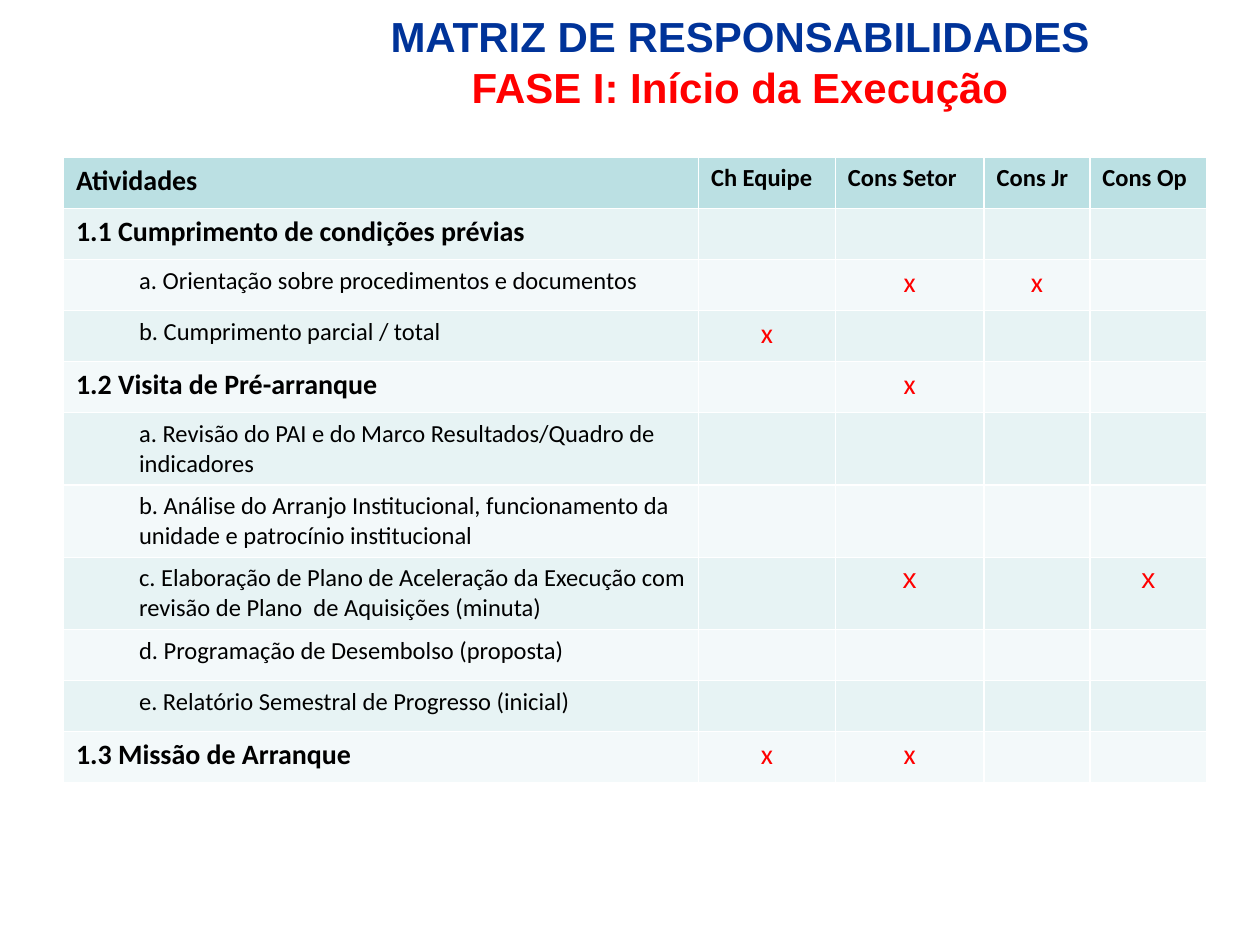
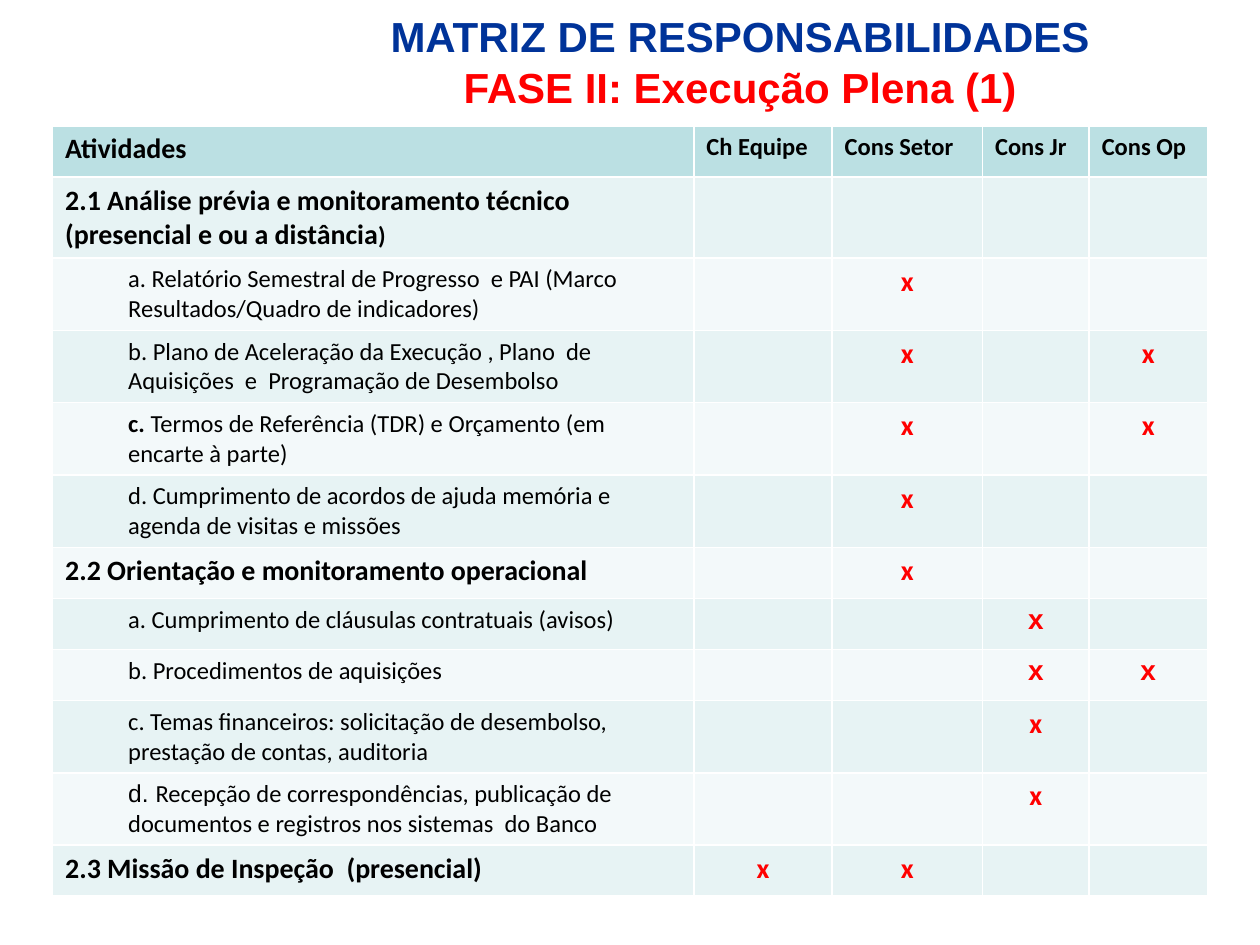
"""Build the two responsibility-matrix slides, phases I and II."""
import pptx
import pptx.dml.color
import pptx.enum.text
import pptx.util

Cm = pptx.util.Cm
ALIGN = pptx.enum.text.PP_ALIGN
COLORS = {
    "title": "003399", "accent": "FF0000", "text": "000000",
    "header": "BBE0E3", "odd": "E7F3F4", "even": "F3F9FA",
}
HEADERS = ["Atividades", "Ch Equipe", "Cons Setor", "Cons Jr", "Cons Op"]
COLUMN_WIDTHS = [12.8, 2.76, 3, 2.13, 2.36]
LINE_LIMIT = 52
SPECIAL_SPANS = {
    ")": {"size": 14, "bold": True},
    "c. ": {"bold": True},
    "d. ": {"face": "Arial"},
}

PHASES = [
    {
        "title": "FASE I: Início da Execução",
        "left": 1.28, "top": 3.17, "scale": 1, "bold_marks": False,
        "activities": [
            ("1.1 Cumprimento de condições prévias", "----", "Calibri"),
            ("a. Orientação sobre procedimentos e documentos", "-xx-", "Calibri"),
            ("b. Cumprimento parcial / total", "x---", "Calibri"),
            ("1.2 Visita de Pré-arranque", "-x--", "Calibri"),
            ("a. Revisão do PAI e do Marco Resultados/Quadro de indicadores", "----", "Calibri"),
            ("b. Análise do Arranjo Institucional, funcionamento da unidade e patrocínio institucional",
             "----", "Calibri"),
            ("c. Elaboração de Plano de Aceleração da Execução com revisão de Plano  de Aquisições (minuta)",
             "-x-x", "Arial"),
            ("d. Programação de Desembolso (proposta)", "----", "Calibri"),
            ("e. Relatório Semestral de Progresso (inicial)", "----", "Calibri"),
            ("1.3 Missão de Arranque", "xx--", "Calibri"),
        ],
    },
    {
        "title": "FASE II: Execução Plena (1)",
        "left": 1.06, "top": 2.54, "scale": 1.01, "bold_marks": True,
        "activities": [
            ("2.1 Análise prévia e monitoramento técnico (presencial e ou a distância|)", "----", "Calibri"),
            ("a. Relatório Semestral de Progresso  e PAI (Marco Resultados/Quadro de indicadores)",
             "-x--", "Calibri"),
            ("b. Plano de Aceleração da Execução , Plano  de Aquisições  e  Programação de Desembolso",
             "-x-x", "Calibri"),
            ("c. |Termos de Referência (TDR) e Orçamento (em encarte à parte)", "-x-x", "Calibri"),
            ("d. Cumprimento de acordos de ajuda memória e agenda de visitas e missões", "-x--", "Calibri"),
            ("2.2 Orientação e monitoramento operacional", "-x--", "Calibri"),
            ("a. Cumprimento de cláusulas contratuais (avisos)", "--x-", "Arial"),
            ("b. Procedimentos de aquisições", "--xx", "Arial"),
            ("c. Temas financeiros: solicitação de desembolso, prestação de contas, auditoria",
             "--x-", "Calibri"),
            ("d. |Recepção de correspondências, publicação de documentos e registros nos sistemas  do Banco",
             "--x-", "Calibri"),
            ("2.3 Missão de Inspeção  (presencial)", "xx--", "Calibri"),
        ],
    },
]


def style_span(span, size, bold=False, color="text", face="Calibri"):
    span.font.size = pptx.util.Pt(size)
    span.font.bold = bold
    span.font.name = face
    span.font.color.rgb = pptx.dml.color.RGBColor.from_string(COLORS[color])


def indent_para(para, left):
    properties = para._p.get_or_add_pPr()
    properties.set("marL", str(Cm(left)))
    properties.set("indent", "0")


deck = pptx.Presentation()
deck.slide_width = Cm(25.4)
deck.slide_height = Cm(19.05)

for phase in PHASES:
    page = deck.slides.add_slide(deck.slide_layouts[5])

    title = page.shapes.title
    title.left, title.top, title.width, title.height = Cm(1.9), Cm(0), Cm(25.4), Cm(1.27)
    frame = title.text_frame
    frame.word_wrap = True
    frame.auto_size = pptx.enum.text.MSO_AUTO_SIZE.NONE
    frame.vertical_anchor = pptx.enum.text.MSO_ANCHOR.TOP
    frame.margin_top = Cm(0.22)
    frame.text = "MATRIZ DE RESPONSABILIDADES\v" + phase["title"]
    para = frame.paragraphs[0]
    para.alignment = ALIGN.CENTER
    para.space_before = pptx.util.Pt(0)
    indent_para(para, 0.64)
    for span, color in zip(para.runs, ["title", "accent"]):
        style_span(span, 24, True, color, "Arial")

    activities = phase["activities"]
    widths = [width * phase["scale"] for width in COLUMN_WIDTHS]
    matrix = page.shapes.add_table(
        len(activities) + 1, len(HEADERS), Cm(phase["left"]), Cm(phase["top"]),
        Cm(sum(widths)), Cm(1.03 * (len(activities) + 1))).table
    for column, width in zip(matrix.columns, widths):
        column.width = Cm(width)
    matrix.rows[0].height = Cm(1.03)

    for index, header in enumerate(HEADERS):
        para = matrix.cell(0, index).text_frame.paragraphs[0]
        para.text = header
        style_span(para.runs[0], 14 if index else 16, True)

    for row, (activity, marks, mark_face) in enumerate(activities, 1):
        matrix.rows[row].height = Cm(1.45 if len(activity) > LINE_LIMIT else 1.03)
        is_heading = activity[0].isdigit()
        para = matrix.cell(row, 0).text_frame.paragraphs[0]
        if not is_heading:
            para.level = 1
            indent_para(para, 1.27)
        for words in activity.split("|"):
            span = para.add_run()
            span.text = words
            look = {"size": 16 if is_heading else 14, "bold": is_heading}
            style_span(span, **{**look, **SPECIAL_SPANS.get(words, {})})
        for column, mark in enumerate(marks, 1):
            if mark == "x":
                para = matrix.cell(row, column).text_frame.paragraphs[0]
                para.text = mark
                para.alignment = ALIGN.CENTER
                style_span(para.runs[0], 16, phase["bold_marks"], "accent", mark_face)

    for row in range(len(activities) + 1):
        band = "header" if row == 0 else ("odd" if row % 2 else "even")
        for cell in matrix.rows[row].cells:
            cell.fill.solid()
            cell.fill.fore_color.rgb = pptx.dml.color.RGBColor.from_string(COLORS[band])

deck.save("out.pptx")
